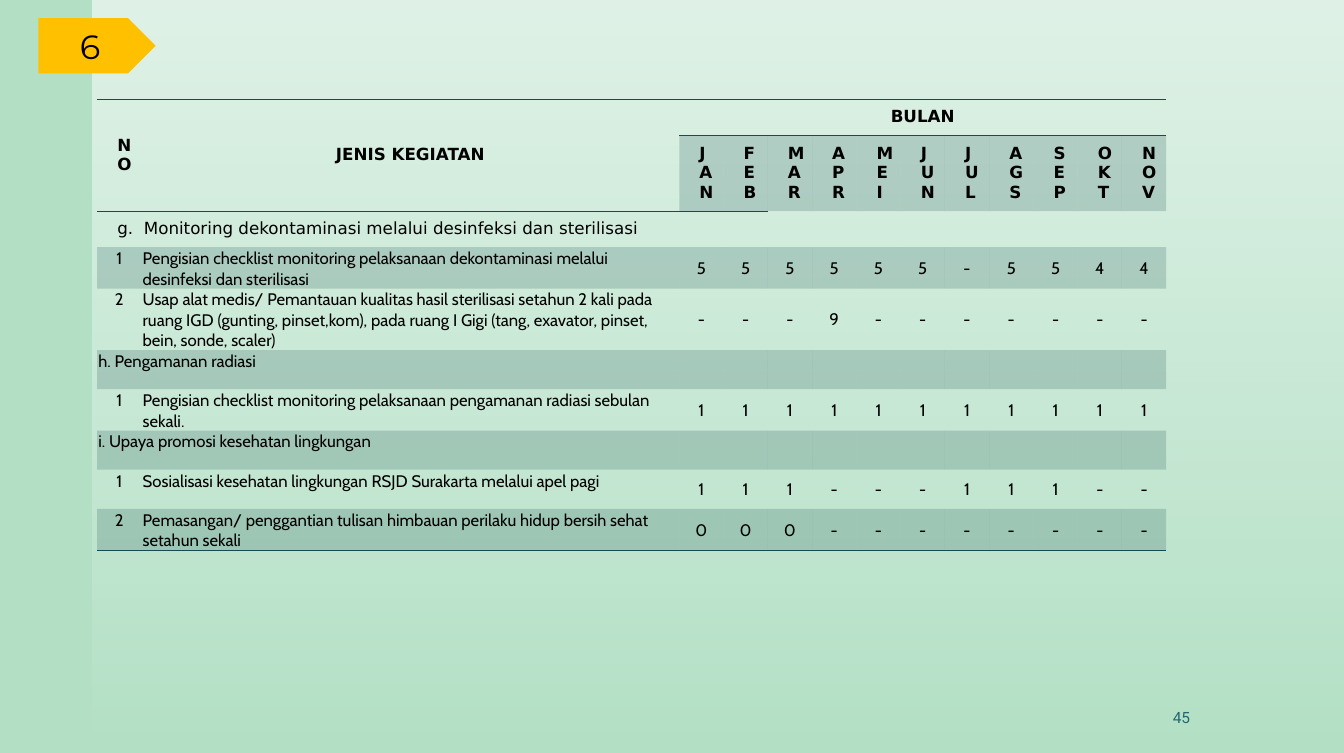
from dataclasses import dataclass
from typing import Any

from lxml.etree import SubElement
from pptx import Presentation
from pptx.dml.color import RGBColor
from pptx.enum.shapes import MSO_SHAPE as Shape
from pptx.enum.text import MSO_ANCHOR as Anchor, PP_ALIGN as Align
from pptx.oxml import parse_xml
from pptx.oxml.ns import nsdecls, qn
from pptx.util import Cm, Pt

MINT, WHITE, AMBER, BLACK = "B3E0C5", "FFFFFF", "FFC000", "000000"
TEAL, PAGE_TEAL = "164B4F", "1F696F"
NO_GRID_STYLE = "{2D5ABB26-0587-4C30-8999-92F81FD0307C}"


@dataclass(frozen=True)
class TextStyle:
    font: str
    size: float = 12
    color: str = BLACK
    bold: bool = False
    align: Align = Align.CENTER
    anchor: Anchor = Anchor.MIDDLE
    margins: tuple[float, ...] = (0.03, 0.03, 0.03, 0)  # left, top, right, bottom


@dataclass(frozen=True)
class Activity:
    number: str
    text: str
    counts: str = ""


WIDE = (0.51, 0.2, 0.51, 0.2)
BOX = (0.25, 0.13, 0.25, 0.13)
HEADER = TextStyle("DejaVu Sans", bold=True, margins=WIDE)
SECTION = TextStyle("DejaVu Sans", align=Align.LEFT, margins=WIDE)
COUNT = TextStyle("Cabin")
NUMBER = TextStyle("Cabin", anchor=Anchor.TOP)
ACTIVITY = TextStyle("Cabin", align=Align.LEFT, anchor=Anchor.TOP)
BADGE = TextStyle("Montserrat", 24.1, margins=BOX)
PAGE = TextStyle("Roboto", 11.1, PAGE_TEAL, align=Align.RIGHT, margins=BOX)

MONTHS = "JAN FEB MAR APR MEI JUN JUL AGS SEP OKT NOV".split()
COLUMNS = [1.11, 13.61] + [1.11] * len(MONTHS)
ROWS = [0.89, 0.89, 0.86, 0.69, 0.97] + [0.99] * 5
FIRST_ACTIVITY_ROW = 3
ACTIVITIES = [
    Activity("1", "Pengisian checklist monitoring pelaksanaan dekontaminasi melalui "
             "desinfeksi dan sterilisasi", "555555-5544"),
    Activity("2", "Usap alat medis/ Pemantauan kualitas hasil sterilisasi setahun 2 kali "
             "pada ruang IGD (gunting, pinset,kom), pada ruang I Gigi (tang, exavator, "
             "pinset, bein, sonde, scaler)", "---9-------"),
    Activity("", "h. Pengamanan radiasi"),
    Activity("1", "Pengisian checklist monitoring pelaksanaan pengamanan radiasi sebulan "
             "sekali.", "11111111111"),
    Activity("", "i. Upaya promosi kesehatan lingkungan"),
    Activity("1", "Sosialisasi kesehatan lingkungan RSJD Surakarta melalui apel pagi",
             "111---111--"),
    Activity("2", "Pemasangan/ penggantian tulisan himbauan perilaku hidup bersih sehat "
             "setahun sekali", "000--------"),
]


def rgb(value: str) -> RGBColor:
    return RGBColor.from_string(value)


def set_attributes(target: Any, values: dict[str, Any]) -> None:
    for name, value in values.items():
        setattr(target, name, value)


def set_opacity(color_element: Any, percent: int) -> None:
    SubElement(color_element, qn("a:alpha"), val=str(percent * 1000))


def write(frame: Any, holder: Any, text: str, style: TextStyle) -> None:
    """Write styled text; holder owns the margins and the anchor."""
    sides = ("margin_left", "margin_top", "margin_right", "margin_bottom")
    set_attributes(holder, dict(zip(sides, map(Cm, style.margins))))
    holder.vertical_anchor = style.anchor
    frame.word_wrap = True
    paragraph = frame.paragraphs[0]
    paragraph.alignment = style.align
    run = paragraph.add_run()
    run.text = text
    set_attributes(run.font, {"name": style.font, "size": Pt(style.size), "bold": style.bold})
    run.font.color.rgb = rgb(style.color)


def add_plain_shape(slide: Any, kind: Shape, box: tuple[float, ...]) -> Any:
    shape = slide.shapes.add_shape(kind, *map(Cm, box))
    shape.shadow.inherit = False
    shape.line.fill.background()
    return shape


def format_cell(cell: Any, shaded: bool, borders: str) -> None:
    properties = cell._tc.get_or_add_tcPr()
    if shaded:
        cell.fill.solid()
        cell.fill.fore_color.rgb = rgb(TEAL)
        set_opacity(next(properties.iter(qn("a:srgbClr"))), 20)
    else:
        cell.fill.background()
    for position, side in enumerate(borders):
        properties.insert(position, parse_xml(
            f'<a:ln{side} {nsdecls("a")} w="12700"><a:solidFill>'
            f'<a:srgbClr val="{TEAL}"/></a:solidFill></a:ln{side}>'))


def add_schedule(slide: Any) -> None:
    graphic = slide.shapes.add_table(
        len(ROWS), len(COLUMNS), Cm(2.46), Cm(2.51), Cm(sum(COLUMNS)), Cm(sum(ROWS)))
    table = graphic.table
    next(graphic.element.iter(qn("a:tableStyleId"))).text = NO_GRID_STYLE
    set_attributes(table, {"first_row": False, "horz_banding": False})
    for column, width in zip(table.columns, COLUMNS):
        column.width = Cm(width)
    for row, height in zip(table.rows, ROWS):
        row.height = Cm(height)

    # Shading and rules
    last = len(ROWS) - 1
    for row in range(len(ROWS)):
        for column in range(len(COLUMNS)):
            in_merged_header = row == 1 and column < 2
            borders = "TB" if row == 0 else "B" if row == last or in_merged_header else ""
            format_cell(table.cell(row, column), row % 2 == 1 and not in_merged_header, borders)

    # Text of every cell, by position
    texts = {
        (0, 0): ("NO", HEADER),
        (0, 1): ("JENIS KEGIATAN", HEADER),
        (0, 2): ("BULAN", HEADER),
        (2, 0): ("g.  Monitoring dekontaminasi melalui desinfeksi dan sterilisasi", SECTION),
    }
    texts |= {(1, column): (month, HEADER) for column, month in enumerate(MONTHS, 2)}
    merges = [((0, 0), (1, 0)), ((0, 1), (1, 1)), ((0, 2), (0, len(COLUMNS) - 1)),
              ((2, 0), (2, 3))]
    for row, activity in enumerate(ACTIVITIES, FIRST_ACTIVITY_ROW):
        if activity.number:
            texts[row, 0] = (activity.number, NUMBER)
            texts[row, 1] = (activity.text, ACTIVITY)
        else:
            texts[row, 0] = (activity.text, ACTIVITY)
            merges.append(((row, 0), (row, 1)))
        texts |= {(row, column): (count, COUNT)
                  for column, count in enumerate(activity.counts, 2)}
    for start, end in merges:
        table.cell(*start).merge(table.cell(*end))
    for row in range(len(ROWS)):
        for column in range(len(COLUMNS)):
            cell = table.cell(row, column)
            if (row, column) in texts:
                write(cell.text_frame, cell, *texts[row, column])
            else:
                paragraph = cell.text_frame.paragraphs[0]
                SubElement(paragraph._p, qn("a:endParaRPr"), sz="1200")
                set_attributes(cell, {"margin_top": Cm(0.03), "margin_bottom": Cm(0)})


def main() -> None:
    presentation = Presentation()
    set_attributes(presentation, {"slide_width": Cm(34.01), "slide_height": Cm(19.05)})
    slide = presentation.slides.add_slide(presentation.slide_layouts[6])

    # Background with a white veil fading downwards
    slide.background.fill.solid()
    slide.background.fill.fore_color.rgb = rgb(MINT)
    veil = add_plain_shape(slide, Shape.RECTANGLE, (2.34, 0, 31.67, 19.05))
    veil.fill.gradient()
    veil.fill.gradient_angle = 270
    for stop in veil.fill.gradient_stops:
        stop.color.rgb = rgb(WHITE)
    for color_element, opacity in zip(list(veil.element.iter(qn("a:srgbClr"))), (60, 0)):
        set_opacity(color_element, opacity)

    # Page number
    page = slide.shapes.add_textbox(*map(Cm, (22.45, 17.65, 7.92, 1.02))).text_frame
    write(page, page, "45", PAGE)

    # Section badge
    badge = add_plain_shape(slide, Shape.PENTAGON, (0.97, 0.46, 2.97, 1.4))
    badge.fill.solid()
    badge.fill.fore_color.rgb = rgb(AMBER)
    write(badge.text_frame, badge.text_frame, "6", BADGE)

    add_schedule(slide)
    presentation.save("out.pptx")


if __name__ == "__main__":
    main()
